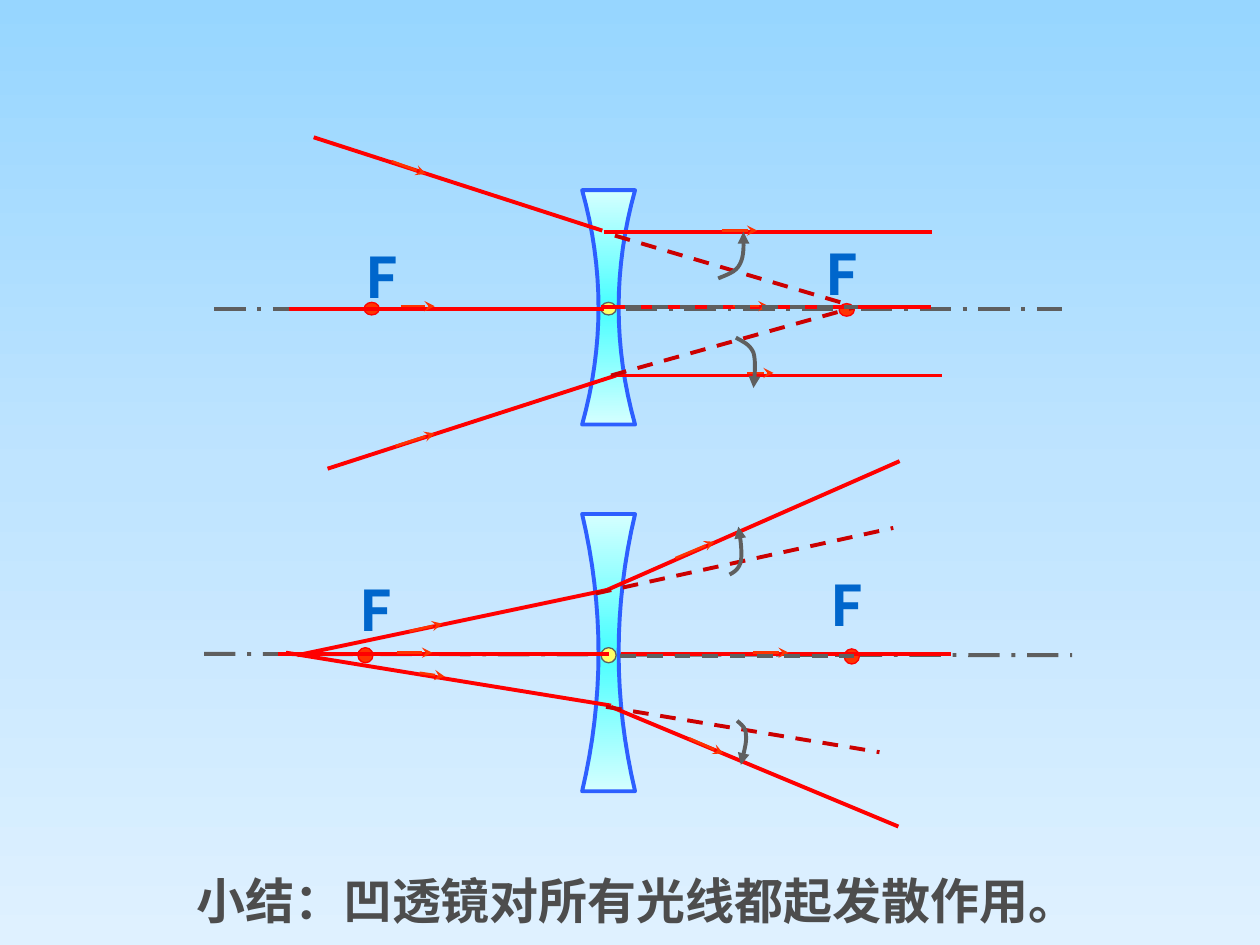
from copy import deepcopy

from pptx import Presentation
from pptx.dml.color import RGBColor
from pptx.enum.dml import MSO_LINE
from pptx.enum.shapes import MSO_CONNECTOR, MSO_SHAPE
from pptx.enum.text import MSO_ANCHOR, PP_ALIGN
from pptx.oxml.ns import qn
from pptx.util import Pt
from lxml import etree

STRAIGHT = MSO_CONNECTOR.STRAIGHT
OVAL = MSO_SHAPE.OVAL
DASH = MSO_LINE.DASH
LONG_DASH_DOT = MSO_LINE.LONG_DASH_DOT
MIDDLE = MSO_ANCHOR.MIDDLE
CENTER = PP_ALIGN.CENTER
LEFT = PP_ALIGN.LEFT
PX = 9144

COLORS = {
    "sky": ["97D6FF", "BFE4FF", "DFF1FF"],
    "glass": ["D5FFFF", "47FFFF", "D5FFFF"],
    "rim": "2D5FFF",
    "gray": "5F5F5F",
    "ray": "FF0000",
    "arrow": "FF3300",
    "extension": "CC0000",
    "center": "FFFF66",
    "label": "0066CC",
    "summary": "4D4D4D",
}

STYLES = {
    "axis": ("gray", 2.25, LONG_DASH_DOT, None),
    "ray": ("ray", 2.25, None, None),
    "arrow": ("arrow", 1.5, None, "stealth"),
    "extension": ("extension", 2.25, DASH, None),
    "middle": ("gray", 2.25, DASH, None),
    "turn": ("gray", 2.25, None, "triangle"),
    "rim": ("rim", 2.25, None, None),
    "center": ("gray", 0.75, None, None),
    "focus": ("ray", 0.75, None, None),
}

SCENES = [
    {
        "axis": (170, 245, 843, 245),
        "lens": (151, 186),
        "dot_height": 10,
        "dots": [("center", 477, 240), ("focus", 289, 240), ("focus", 666, 241)],
        "labels": [(270, 188), (635, 185)],
        "lines": [
            ("ray", 229, 245, 479, 245), ("arrow", 318, 243, 345, 243),
            ("ray", 260, 372, 489, 298), ("arrow", 314, 354, 345, 344),
            ("ray", 249, 109, 478, 183), ("arrow", 311, 128, 338, 138),
            ("ray", 479, 184, 740, 184), ("arrow", 573, 183, 601, 183),
            ("ray", 486, 298, 748, 298), ("arrow", 593, 296, 614, 296),
            ("ray", 477, 244, 739, 244), ("arrow", 582, 243, 610, 243),
            ("extension", 485, 298, 678, 244),
            ("extension", 488, 187, 674, 242),
            ("middle", 496, 244, 681, 244),
        ],
        "turns": [
            [(570, 221), (577, 218), (584, 216), (587, 210),
             (591, 203), (590, 194), (590, 184)],
            [(584, 268), (589, 271), (595, 273), (598, 280),
             (600, 287), (599, 297), (598, 308)],
        ],
    },
    {
        "axis": (162, 519, 851, 520),
        "lens": (408, 220),
        "dot_height": 12,
        "dots": [("center", 477, 514), ("focus", 284, 514), ("focus", 670, 515)],
        "labels": [(265, 452), (639, 448)],
        "lines": [
            ("ray", 480, 469, 714, 366), ("arrow", 536, 443, 567, 430),
            ("ray", 485, 561, 713, 656), ("arrow", 547, 586, 574, 598),
            ("ray", 493, 519, 755, 519), ("arrow", 598, 518, 626, 518),
            ("ray", 221, 519, 483, 519), ("arrow", 315, 518, 343, 518),
            ("ray", 236, 520, 483, 468), ("arrow", 325, 501, 351, 495),
            ("ray", 227, 518, 485, 560), ("arrow", 333, 534, 353, 537),
            ("extension", 473, 471, 709, 419),
            ("extension", 481, 561, 698, 597),
            ("middle", 492, 521, 678, 521),
        ],
        "turns": [
            [(579, 456), (583, 454), (587, 451), (588, 445),
             (589, 439), (588, 429), (586, 418)],
            [(585, 572), (588, 575), (592, 577), (592, 583),
             (593, 589), (590, 598), (588, 607)],
        ],
    },
]


def set_gradient(fill, element, hexes):
    fill.gradient()
    fill.gradient_angle = 270
    stop_list = element.find(".//" + qn("a:gsLst"))
    stop_list.append(deepcopy(stop_list[-1]))
    for stop, position, color in zip(fill.gradient_stops, (0, 0.5, 1), hexes):
        stop.position = position
        stop.color.rgb = RGBColor.from_string(color)


def style_line(shape, style):
    color, width, dash, arrowhead = STYLES[style]
    shape.line.color.rgb = RGBColor.from_string(COLORS[color])
    shape.line.width = Pt(width)
    if dash:
        shape.line.dash_style = dash
    properties = shape.element.spPr
    if arrowhead:
        outline = properties.find(qn("a:ln"))
        etree.SubElement(outline, qn("a:tailEnd"), type=arrowhead)
    etree.SubElement(properties, qn("a:effectLst"))


deck = Presentation()
deck.slide_width = 1000 * PX
deck.slide_height = 750 * PX
page = deck.slides.add_slide(deck.slide_layouts[6])
set_gradient(page.background.fill, page.element, COLORS["sky"])
texts = []

for scene in SCENES:
    axis = page.shapes.add_connector(STRAIGHT, *[value * PX for value in scene["axis"]])
    style_line(axis, "axis")

    top, height = scene["lens"]
    edge = [(8 + 13 * (step / 8 - 1) ** 2, top + height * step / 16) for step in range(17)]
    outline = [(483 + half, y) for half, y in edge]
    outline += [(483 - half, y) for half, y in reversed(edge)]
    points = [(x * PX, y * PX) for x, y in outline]
    builder = page.shapes.build_freeform(*points[0])
    builder.add_line_segments(points[1:], close=True)
    lens = builder.convert_to_shape()
    set_gradient(lens.fill, lens.element, COLORS["glass"])
    style_line(lens, "rim")

    for kind, x, y in scene["dots"]:
        dot = page.shapes.add_shape(OVAL, x * PX, y * PX, 12 * PX, scene["dot_height"] * PX)
        dot.fill.solid()
        dot_color = "center" if kind == "center" else "arrow"
        dot.fill.fore_color.rgb = RGBColor.from_string(COLORS[dot_color])
        style_line(dot, kind)

    for style, *ends in scene["lines"]:
        line = page.shapes.add_connector(STRAIGHT, *[value * PX for value in ends])
        style_line(line, style)

    for controls in scene["turns"]:
        points = []
        for start in (0, 3):
            a, b, c, d = controls[start:start + 4]
            for step in range(9):
                t = step / 8
                weights = ((1 - t) ** 3, 3 * t * (1 - t) ** 2, 3 * t * t * (1 - t), t ** 3)
                points.append([
                    sum(w * point[i] for w, point in zip(weights, (a, b, c, d))) * PX
                    for i in (0, 1)
                ])
        builder = page.shapes.build_freeform(*points[0])
        builder.add_line_segments(points[1:], close=False)
        turn = builder.convert_to_shape()
        turn.fill.background()
        style_line(turn, "turn")

    for x, y in scene["labels"]:
        texts.append(("F", x, y, 66, 63, 32, "Noto Sans CJK SC", "label", CENTER))

texts.append(("小结：凹透镜对所有光线都起发散作用。", 146, 686, 701, 57, 28,
              "Times New Roman", "summary", LEFT))

for text, x, y, width, height, size, font, color, alignment in texts:
    box = page.shapes.add_textbox(x * PX, y * PX, width * PX, height * PX)
    frame = box.text_frame
    frame.text = text
    frame.word_wrap = True
    frame.vertical_anchor = MIDDLE
    para = frame.paragraphs[0]
    para.alignment = alignment
    span = para.runs[0]
    span.font.name = font
    span.font.size = Pt(size)
    span.font.bold = True
    span.font.color.rgb = RGBColor.from_string(COLORS[color])

deck.save("out.pptx")
